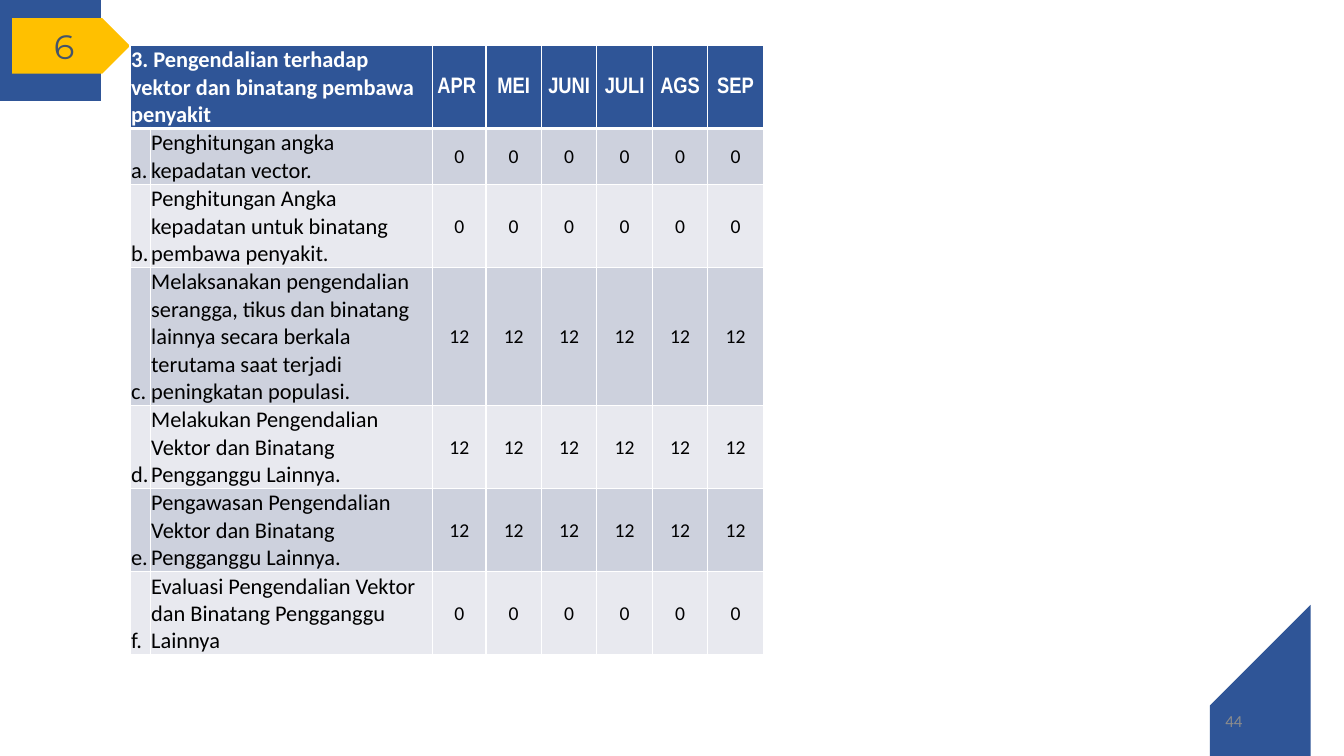
"""Build the slide with the monthly vector and pest control table."""
from dataclasses import dataclass

import lxml.etree
import pptx
import pptx.dml.color
import pptx.enum.shapes
import pptx.enum.text
import pptx.oxml.ns
import pptx.util

Inches = pptx.util.Inches
ALIGN = pptx.enum.text.PP_ALIGN
ANCHOR = pptx.enum.text.MSO_ANCHOR


@dataclass(frozen=True)
class Theme:
    blue: str = "2F5597"
    gold: str = "FFC000"
    slate: str = "44546A"
    grey: str = "8C8C8C"
    white: str = "FFFFFF"
    black: str = "000000"
    bands: tuple = ("CDD1DD", "E8E9EF")
    badge_size: float = 24.1
    label_size: float = 16
    value_size: float = 14
    page_size: float = 12


theme = Theme()


def write(frame, text, font="Calibri", size=theme.label_size, color=theme.black, bold=False, align=ALIGN.LEFT):
    frame.word_wrap = True
    paragraph = frame.paragraphs[0]
    paragraph.alignment = align
    run = paragraph.add_run()
    run.text = text
    run.font.name = font
    run.font.size = pptx.util.Pt(size)
    run.font.bold = bold
    run.font.color.rgb = pptx.dml.color.RGBColor.from_string(color)


def paint(shape, color):
    shape.shadow.inherit = False
    shape.fill.solid()
    shape.fill.fore_color.rgb = pptx.dml.color.RGBColor.from_string(color)
    shape.line.fill.background()


deck = pptx.Presentation()
deck.slide_width = Inches(13.33)
deck.slide_height = Inches(7.5)
slide = deck.slides.add_slide(deck.slide_layouts[6])

corners = [
    ([(13.33, 7.5), (12.11, 7.5)], [(12.04, 7.36), (11.9, 7.06), (12.03, 6.69), (12.34, 6.55)], [(13.33, 6.09)]),
    ([(0, 0), (1.22, 0)], [(1.29, 0.15), (1.43, 0.46), (1.29, 0.83), (0.99, 0.97)], [(0, 1.42)]),
]
curve_steps = 24
for edge_start, bend, edge_end in corners:
    outline = list(edge_start)
    for step in range(curve_steps + 1):
        t = step / curve_steps
        weights = ((1 - t) ** 3, 3 * t * (1 - t) ** 2, 3 * t ** 2 * (1 - t), t ** 3)
        outline.append(tuple(sum(w * p[axis] for w, p in zip(weights, bend)) for axis in (0, 1)))
    outline += edge_end
    builder = slide.shapes.build_freeform(*outline[0], scale=Inches(1))
    builder.add_line_segments(outline[1:], close=True)
    paint(builder.convert_to_shape(), theme.blue)

badge = slide.shapes.add_shape(
    pptx.enum.shapes.MSO_SHAPE.PENTAGON, Inches(0.12), Inches(0.18), Inches(1.17), Inches(0.55))
paint(badge, theme.gold)
badge.text_frame.vertical_anchor = ANCHOR.MIDDLE
write(badge.text_frame, "6", font="Montserrat", size=theme.badge_size, color=theme.slate, align=ALIGN.CENTER)

title = "3. Pengendalian terhadap vektor dan binatang pembawa penyakit"
months = ["APR ", "MEI", "JUNI", "JULI", "AGS", "SEP"]
activities = [
    ("Penghitungan angka kepadatan vector.", 0),
    ("Penghitungan Angka kepadatan untuk binatang pembawa penyakit.", 0),
    ("Melaksanakan pengendalian serangga, tikus dan binatang lainnya secara berkala "
     "terutama saat terjadi peningkatan populasi.", 12),
    ("Melakukan Pengendalian Vektor dan Binatang Pengganggu Lainnya.", 12),
    ("Pengawasan Pengendalian Vektor dan Binatang Pengganggu Lainnya.", 12),
    ("Evaluasi Pengendalian Vektor dan Binatang Pengganggu Lainnya", 0),
]
rows = [[title, ""] + months]
for letter, (activity, count) in zip("abcdef", activities):
    rows.append([f"{letter}.", activity] + [str(count)] * len(months))

column_widths = [0.2, 2.8, 0.53] + [0.55] * 5
row_heights = [0.59, 0.41, 0.75, 1.05, 0.75, 0.75, 0.71]
schedule = slide.shapes.add_table(
    len(rows), len(column_widths), Inches(1.29), Inches(0.45), Inches(6.28), Inches(5.94)).table
schedule.first_row = False
schedule.horz_banding = False
for column, width in zip(schedule.columns, column_widths):
    column.width = Inches(width)
for row, height in zip(schedule.rows, row_heights):
    row.height = Inches(height)
schedule.cell(0, 0).merge(schedule.cell(0, 1))

qn = pptx.oxml.ns.qn
for r, texts in enumerate(rows):
    header = r == 0
    for c, text in enumerate(texts):
        cell = schedule.cell(r, c)
        cell.margin_left = cell.margin_right = cell.margin_top = Inches(0.01)
        cell.margin_bottom = 0
        properties = cell._tc.get_or_add_tcPr()
        for side in ("L", "R", "T", "B"):
            heavy = (header and side == "B") or (r == 1 and side == "T")
            border = lxml.etree.SubElement(properties, qn(f"a:ln{side}"), w=str(pptx.util.Pt(3 if heavy else 1)))
            stroke = lxml.etree.SubElement(border, qn("a:solidFill"))
            lxml.etree.SubElement(stroke, qn("a:srgbClr"), val=theme.white)
        cell.fill.solid()
        band = theme.blue if header else theme.bands[(r - 1) % 2]
        cell.fill.fore_color.rgb = pptx.dml.color.RGBColor.from_string(band)
        monthly = c >= 2
        if monthly:
            cell.vertical_anchor = ANCHOR.MIDDLE
        else:
            cell.vertical_anchor = ANCHOR.BOTTOM if c == 0 else ANCHOR.TOP
        if text:
            write(cell.text_frame, text,
                  font="Arial Narrow" if header and monthly else "Calibri",
                  size=theme.value_size if monthly and not header else theme.label_size,
                  color=theme.white if header else theme.black,
                  bold=header,
                  align=ALIGN.CENTER if monthly else ALIGN.LEFT)

page_number = slide.shapes.add_textbox(Inches(9.42), Inches(6.95), Inches(3), Inches(0.4))
page_number.text_frame.vertical_anchor = ANCHOR.MIDDLE
write(page_number.text_frame, "44", size=theme.page_size, color=theme.grey, align=ALIGN.RIGHT)

deck.save("out.pptx")
